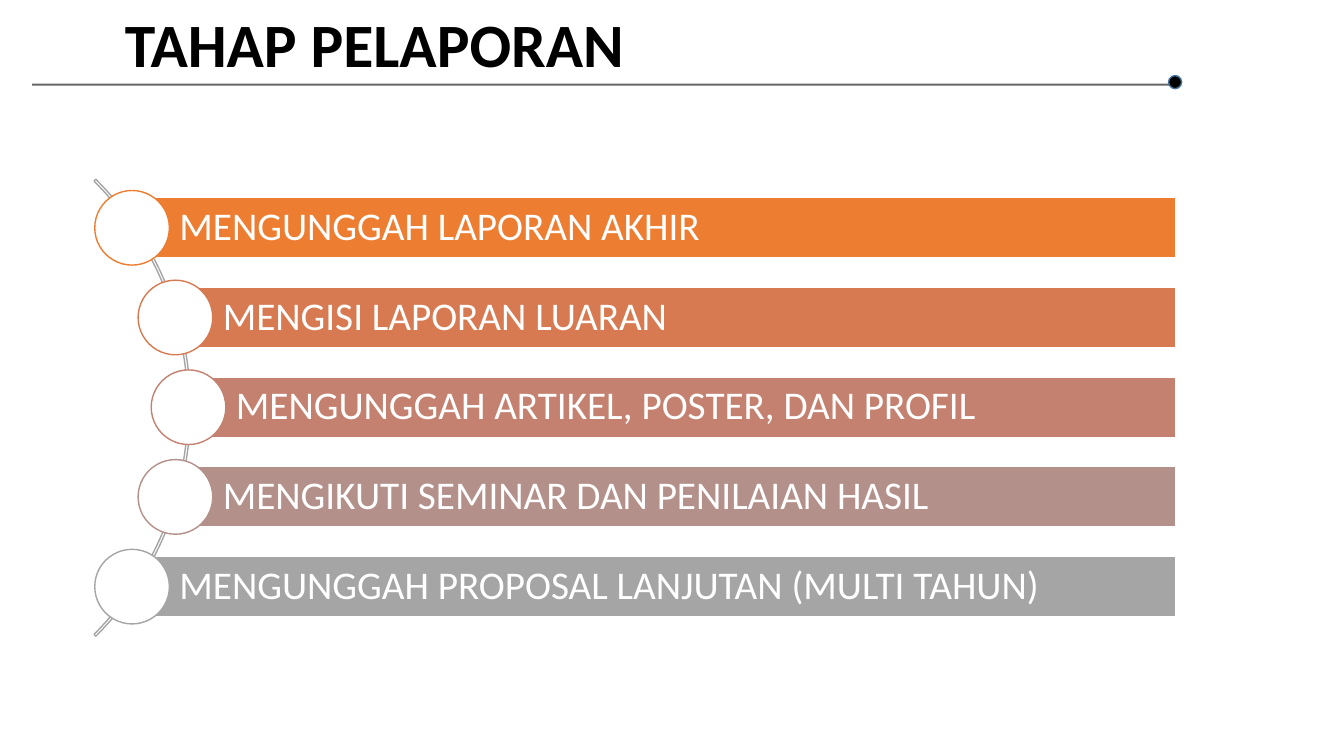
from dataclasses import dataclass

import pptx
import pptx.dml.color
import pptx.enum.shapes
import pptx.enum.text
import pptx.oxml
import pptx.oxml.ns
import pptx.shapes.autoshape
import pptx.slide
import pptx.util

Inches = pptx.util.Inches
SHAPE = pptx.enum.shapes.MSO_SHAPE


@dataclass(frozen=True)
class Theme:
    font: str = "Calibri"
    title_size: int = 44
    step_size: int = 28
    black: str = "000000"
    white: str = "FFFFFF"
    gray: str = "A5A5A5"
    dot_line: str = "43739E"


@dataclass(frozen=True)
class Step:
    text: str
    left: float
    color: str


THEME = Theme()
STEPS = [
    Step("MENGUNGGAH LAPORAN AKHIR", 1.31, "ED7D31"),
    Step("MENGISI LAPORAN LUARAN", 1.74, "D87A51"),
    Step("MENGUNGGAH ARTIKEL, POSTER, DAN PROFIL", 1.87, "C48170"),
    Step("MENGIKUTI SEMINAR DAN PENILAIAN HASIL", 1.74, "B4908B"),
    Step("MENGUNGGAH PROPOSAL LANJUTAN (MULTI TAHUN)", 1.31, THEME.gray),
]
BARS_RIGHT = 11.66
BARS_CENTER = 4.04
BAR_HEIGHT = 0.6
BAR_PITCH = 0.89
CIRCLE_SIZE = 0.74


def rgb(color: str) -> pptx.dml.color.RGBColor:
    return pptx.dml.color.RGBColor.from_string(color)


def add_text(
    sp: pptx.shapes.autoshape.Shape,
    text: str,
    *,
    size: int,
    color: str,
    bold: bool = False,
    insets: tuple[float, float, float, float] = (0.1, 0.05, 0.1, 0.05),
) -> None:
    """Write one left-aligned line; insets run left, top, right, bottom."""
    tf = sp.text_frame
    tf.word_wrap = True
    tf.vertical_anchor = pptx.enum.text.MSO_ANCHOR.MIDDLE
    tf.margin_left, tf.margin_top, tf.margin_right, tf.margin_bottom = map(Inches, insets)
    p = tf.paragraphs[0]
    p.alignment = pptx.enum.text.PP_ALIGN.LEFT
    p.line_spacing = 0.9
    r = p.add_run()
    r.text = text
    r.font.name = THEME.font
    r.font.size = pptx.util.Pt(size)
    r.font.bold = bold
    r.font.color.rgb = rgb(color)


def add_shape(
    s: pptx.slide.Slide,
    kind: pptx.enum.shapes.MSO_SHAPE,
    box: tuple[float, float, float, float],
    fill: str | None,
    line: str,
) -> pptx.shapes.autoshape.Shape:
    sp = s.shapes.add_shape(kind, *map(Inches, box))
    sp.shadow.inherit = False
    if fill is None:
        sp.fill.background()
    else:
        sp.fill.solid()
        sp.fill.fore_color.rgb = rgb(fill)
    sp.line.color.rgb = rgb(line)
    sp.line.width = pptx.util.Pt(1)
    return sp


def add_header(s: pptx.slide.Slide) -> None:
    title = s.shapes.add_textbox(*map(Inches, (1.14, 0.06, 11.2, 0.83)))
    add_text(title, "TAHAP PELAPORAN", size=THEME.title_size, color=THEME.black, bold=True)

    rule = s.shapes.add_connector(
        pptx.enum.shapes.MSO_CONNECTOR.STRAIGHT, *map(Inches, (0.32, 0.84, 11.63, 0.84))
    )
    rule.line.color.rgb = rgb(THEME.black)
    rule.line.width = pptx.util.Pt(1.5)
    props = rule._element.spPr
    color = props.find(".//" + pptx.oxml.ns.qn("a:srgbClr"))
    alpha = pptx.oxml.parse_xml(f'<a:alpha {pptx.oxml.ns.nsdecls("a")} val="60000"/>')
    color.append(alpha)
    props.append(pptx.oxml.parse_xml(f'<a:effectLst {pptx.oxml.ns.nsdecls("a")}/>'))

    add_shape(s, SHAPE.OVAL, (11.59, 0.75, 0.13, 0.13), THEME.black, THEME.dot_line)


def add_arc(s: pptx.slide.Slide) -> None:
    arc = add_shape(s, SHAPE.BLOCK_ARC, (-4.52, 0.84, 6.41, 6.41), None, THEME.gray)
    for i, value in enumerate((189, 27, 0.004)):
        arc.adjustments[i] = value


def add_step(s: pptx.slide.Slide, step: Step, middle: float) -> None:
    """Draw a bar centred on middle, with a circle on its left end."""
    bar_box = (step.left, middle - BAR_HEIGHT / 2, BARS_RIGHT - step.left, BAR_HEIGHT)
    bar = add_shape(s, SHAPE.RECTANGLE, bar_box, step.color, THEME.white)
    add_text(
        bar, step.text, size=THEME.step_size, color=THEME.white, insets=(0.47, 0.08, 0.08, 0.08)
    )
    radius = CIRCLE_SIZE / 2
    circle_box = (step.left - radius, middle - radius, CIRCLE_SIZE, CIRCLE_SIZE)
    add_shape(s, SHAPE.OVAL, circle_box, THEME.white, step.color)


def main() -> None:
    prs = pptx.Presentation()
    prs.slide_width, prs.slide_height = Inches(13.33), Inches(7.5)
    s = prs.slides.add_slide(prs.slide_layouts[6])
    add_header(s)
    add_arc(s)
    for i, step in enumerate(STEPS):
        add_step(s, step, BARS_CENTER + (i - len(STEPS) // 2) * BAR_PITCH)
    prs.save("out.pptx")


if __name__ == "__main__":
    main()
